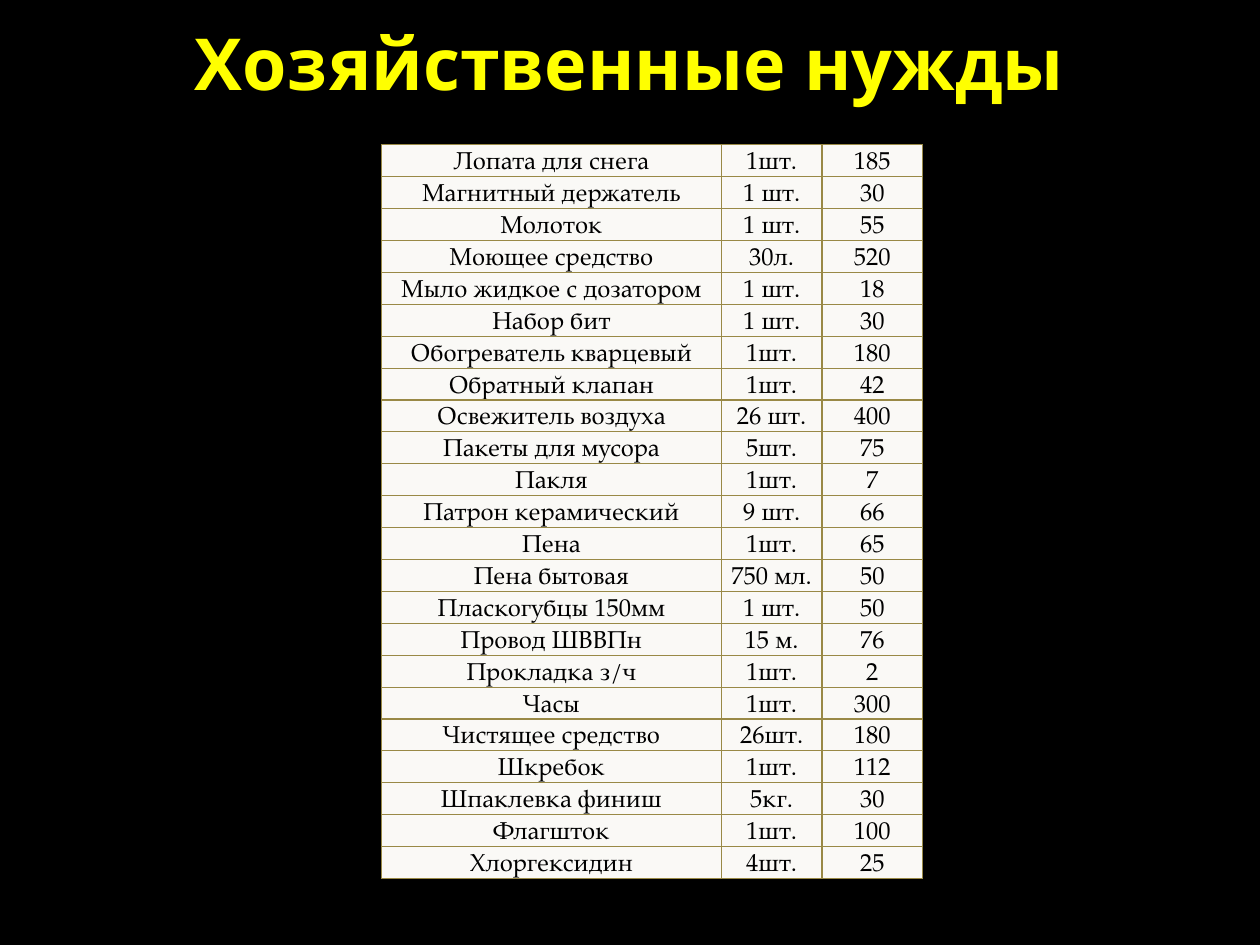
from dataclasses import dataclass

from lxml import etree
from pptx import Presentation
from pptx.dml.color import RGBColor
from pptx.enum.text import MSO_ANCHOR, PP_ALIGN
from pptx.oxml.ns import qn
from pptx.util import Cm, Pt

CENTER = PP_ALIGN.CENTER
MIDDLE, BOTTOM = MSO_ANCHOR.MIDDLE, MSO_ANCHOR.BOTTOM
TITLE_ONLY = 5


@dataclass(frozen=True)
class Theme:
    background: str = "000000"
    title_color: str = "FFFF00"
    title_font: str = "Noto Sans"
    title_size: float = 41
    cell_fill: str = "FAF9F6"
    cell_color: str = "000000"
    cell_font: str = "TeX Gyre Pagella"
    cell_size: float = 14
    border_color: str = "998946"
    border_width: float = 0.75


@dataclass(frozen=True)
class Box:
    """A region of the slide, in centimetres."""
    left: float
    top: float
    width: float
    height: float

    def lengths(self):
        return Cm(self.left), Cm(self.top), Cm(self.width), Cm(self.height)


THEME = Theme()
TITLE_BOX = Box(1.27, 0, 22.86, 2.51)
PURCHASES_BOX = Box(7.69, 2.92, 10.91, 14.81)
COLUMN_SHARES = (0.628, 0.186, 0.186)  # item, quantity, cost

PURCHASES = [
    ("Лопата для снега", "1шт.", "185"),
    ("Магнитный держатель", "1 шт.", "30"),
    ("Молоток", "1 шт.", "55"),
    ("Моющее средство", "30л.", "520"),
    ("Мыло жидкое с дозатором", "1 шт.", "18"),
    ("Набор бит", "1 шт.", "30"),
    ("Обогреватель кварцевый", "1шт.", "180"),
    ("Обратный клапан", "1шт.", "42"),
    ("Освежитель воздуха", "26 шт.", "400"),
    ("Пакеты для мусора", "5шт.", "75"),
    ("Пакля", "1шт.", "7"),
    ("Патрон керамический", "9 шт.", "66"),
    ("Пена", "1шт.", "65"),
    ("Пена бытовая", "750 мл.", "50"),
    ("Пласкогубцы 150мм", "1 шт.", "50"),
    ("Провод ШВВПн", "15 м.", "76"),
    ("Прокладка з/ч", "1шт.", "2"),
    ("Часы", "1шт.", "300"),
    ("Чистящее средство", "26шт.", "180"),
    ("Шкребок", "1шт.", "112"),
    ("Шпаклевка финиш", "5кг.", "30"),
    ("Флагшток", "1шт.", "100"),
    ("Хлоргексидин", "4шт.", "25"),
]


def write_centered(frame, text, font_name, size, color, bold=False):
    paragraph = frame.paragraphs[0]
    paragraph.text = text
    paragraph.alignment = CENTER
    font = paragraph.font
    font.name, font.size, font.bold = font_name, Pt(size), bold
    font.color.rgb = RGBColor.from_string(color)


def add_borders(cell):
    properties = cell._tc.get_or_add_tcPr()
    for side in ("a:lnL", "a:lnR", "a:lnT", "a:lnB"):
        line = etree.SubElement(properties, qn(side), w=str(Pt(THEME.border_width)))
        fill = etree.SubElement(line, qn("a:solidFill"))
        etree.SubElement(fill, qn("a:srgbClr"), val=THEME.border_color)


def format_cell(cell, text):
    write_centered(cell.text_frame, text, THEME.cell_font, THEME.cell_size,
                   THEME.cell_color)
    cell.vertical_anchor = BOTTOM
    cell.margin_left = cell.margin_top = cell.margin_right = Cm(0.02)
    cell.margin_bottom = 0
    add_borders(cell)
    cell.fill.solid()
    cell.fill.fore_color.rgb = RGBColor.from_string(THEME.cell_fill)


def place_title(slide, box, text):
    title = slide.shapes.title
    title.left, title.top, title.width, title.height = box.lengths()
    title.text_frame.vertical_anchor = MIDDLE
    write_centered(title.text_frame, text, THEME.title_font, THEME.title_size,
                   THEME.title_color, bold=True)


def place_purchases(slide, box, purchases):
    table = slide.shapes.add_table(
        len(purchases), len(COLUMN_SHARES), *box.lengths()).table
    table.first_row = table.horz_banding = False
    for column, share in zip(table.columns, COLUMN_SHARES):
        column.width = Cm(box.width * share)
    for row, purchase in zip(table.rows, purchases):
        row.height = Cm(box.height / len(purchases))
        for cell, text in zip(row.cells, purchase):
            format_cell(cell, text)


def main():
    presentation = Presentation()
    presentation.slide_width, presentation.slide_height = Cm(25.4), Cm(19.05)
    slide = presentation.slides.add_slide(presentation.slide_layouts[TITLE_ONLY])

    # Black backdrop
    slide.background.fill.solid()
    slide.background.fill.fore_color.rgb = RGBColor.from_string(THEME.background)

    # Heading and list of purchases
    place_title(slide, TITLE_BOX, "Хозяйственные нужды")
    place_purchases(slide, PURCHASES_BOX, PURCHASES)

    presentation.save("out.pptx")


if __name__ == "__main__":
    main()
